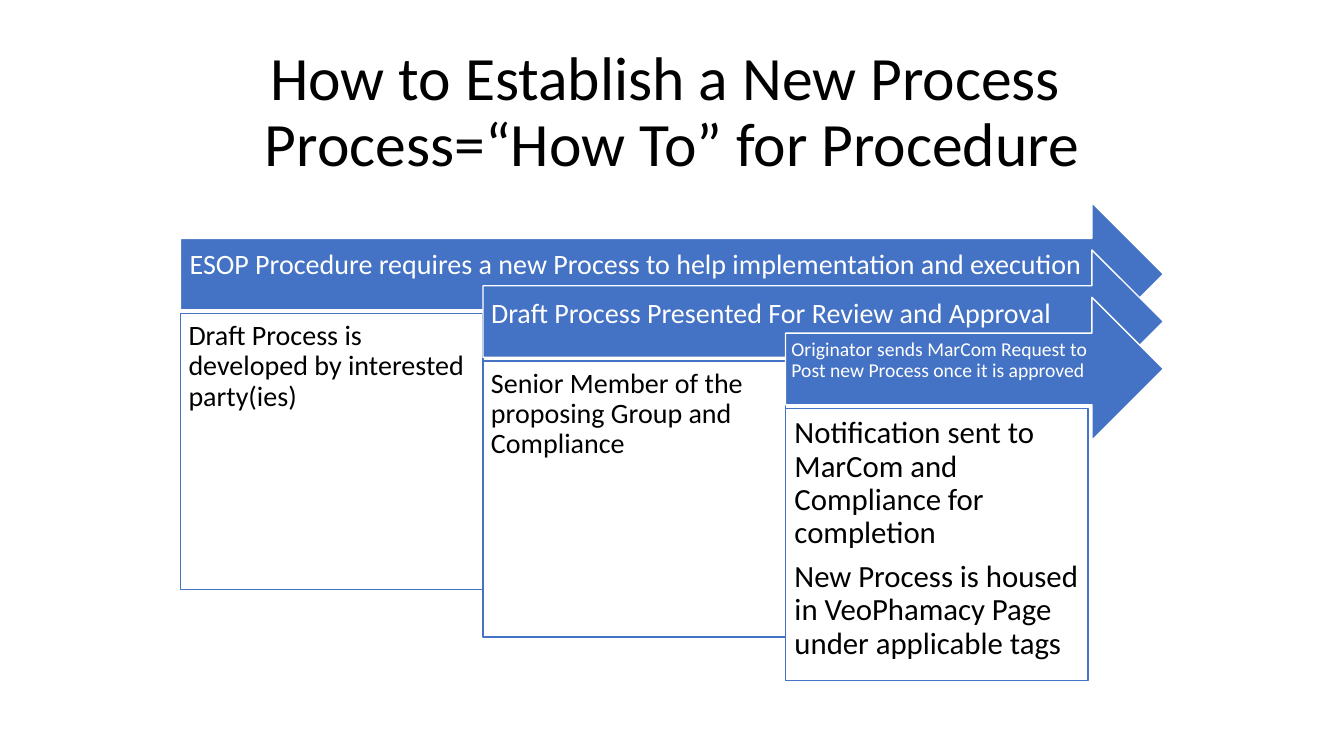
from pptx import Presentation
from pptx.dml.color import RGBColor
from pptx.enum.shapes import MSO_SHAPE
from pptx.enum.text import MSO_ANCHOR, MSO_AUTO_SIZE, PP_ALIGN
from pptx.util import Inches, Pt

RIGHT_ARROW, RECTANGLE = MSO_SHAPE.RIGHT_ARROW, MSO_SHAPE.RECTANGLE
TOP, MIDDLE = MSO_ANCHOR.TOP, MSO_ANCHOR.MIDDLE
LEFT, CENTER = PP_ALIGN.LEFT, PP_ALIGN.CENTER
NO_AUTOFIT = MSO_AUTO_SIZE.NONE

BLUE = RGBColor(0x44, 0x72, 0xC4)
WHITE = RGBColor(0xFF, 0xFF, 0xFF)
BLACK = RGBColor(0x00, 0x00, 0x00)
FONT = "Calibri"
TITLE_ONLY = 5

TITLE = "How to Establish a New Process \vProcess=“How To” for Procedure"

# heading, heading size, heading insets, details, detail size, detail inset, box height
STEPS = [
    ("ESOP Procedure requires a new Process to help implementation and execution",
     20, (0.09, 0.05, 0.28, 0.23),
     ["Draft Process is developed by interested party(ies)"], 20, 0.08, 2.74),
    ("Draft Process Presented For Review and Approval",
     20, (0.08, 0.08, 0.28, 0.23),
     ["Senior Member of the proposing Group and Compliance"], 20, 0.08, 2.74),
    ("Originator sends MarCom Request to Post new Process once it is approved",
     14, (0.06, 0.06, 0.28, 0.23),
     ["Notification sent to MarCom and Compliance for completion",
      "New Process is housed in VeoPhamacy Page under applicable tags"], 22, 0.09, 2.7),
]
STEP_WIDTH, STEP_DROP = 3.0, 0.47
ARROW_HEIGHT, BOX_OFFSET = 1.42, 1.1


def write_text(shape, paragraphs, *, size, color, align=LEFT, anchor=TOP, insets=None):
    """Fill a shape with paragraphs; insets are left, top, right, bottom in inches."""
    frame = shape.text_frame
    frame.word_wrap = True
    frame.auto_size = NO_AUTOFIT
    frame.vertical_anchor = anchor
    if insets:
        (frame.margin_left, frame.margin_top,
         frame.margin_right, frame.margin_bottom) = map(Inches, insets)
    for index, text in enumerate(paragraphs):
        paragraph = frame.paragraphs[0] if index == 0 else frame.add_paragraph()
        paragraph.text = text
        paragraph.alignment = align
        paragraph.line_spacing = 0.9
        paragraph.space_before = Pt(0)
        paragraph.space_after = Pt(0.35 * size)
        for run in paragraph.runs:
            run.font.name = FONT
            run.font.size = Pt(size)
            run.font.color.rgb = color


def add_panel(slide, kind, left, top, width, height, *, fill, line):
    panel = slide.shapes.add_shape(kind, *map(Inches, (left, top, width, height)))
    panel.shadow.inherit = False
    panel.fill.solid()
    panel.fill.fore_color.rgb = fill
    panel.line.color.rgb = line
    panel.line.width = Pt(1)
    return panel


def add_title(slide, left, top, width, height):
    title = slide.shapes.title
    title.left, title.top, title.width, title.height = map(
        Inches, (left, top, width, height))
    write_text(title, [TITLE], size=44, color=BLACK, align=CENTER, anchor=MIDDLE)


def add_step(slide, step, left, top, width):
    """Draw a heading arrow of the given width with its detail box below."""
    heading, heading_size, insets, details, detail_size, inset, box_height = step
    arrow = add_panel(slide, RIGHT_ARROW, left, top, width, ARROW_HEIGHT,
                      fill=BLUE, line=WHITE)
    write_text(arrow, [heading], size=heading_size, color=WHITE,
               anchor=MIDDLE, insets=insets)
    box = add_panel(slide, RECTANGLE, left, top + BOX_OFFSET, STEP_WIDTH, box_height,
                    fill=WHITE, line=BLUE)
    write_text(box, details, size=detail_size, color=BLACK, insets=(inset,) * 4)


def add_process(slide, left, top, width):
    """Cascade the steps down and right; all arrows end at the same edge."""
    for index, step in enumerate(STEPS):
        shift = index * STEP_WIDTH
        add_step(slide, step, left + shift, top + index * STEP_DROP, width - shift)


def main():
    deck = Presentation()
    deck.slide_width, deck.slide_height = Inches(13.33), Inches(7.5)
    slide = deck.slides.add_slide(deck.slide_layouts[TITLE_ONLY])
    add_title(slide, 0.92, 0.4, 11.5, 1.45)
    add_process(slide, 1.79, 2.01, 9.75)
    deck.save("out.pptx")


if __name__ == "__main__":
    main()
